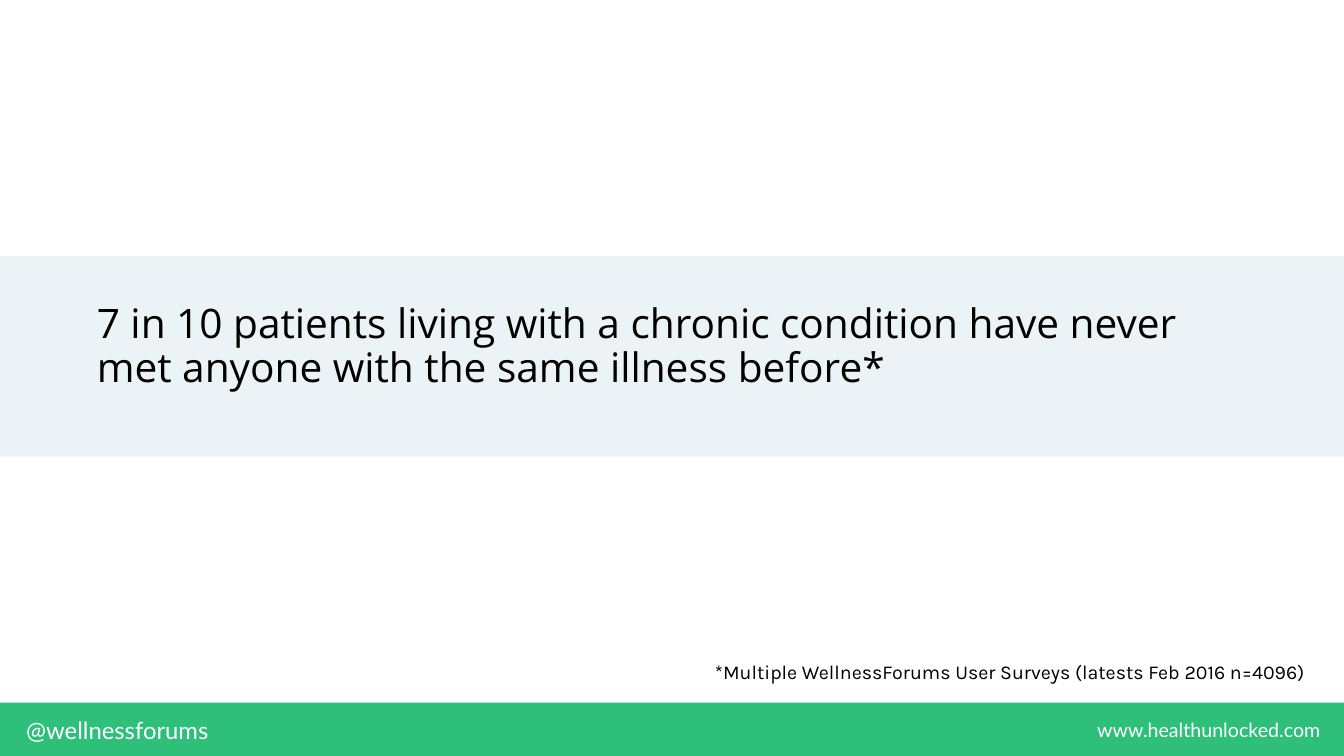
from pptx import Presentation
from pptx.dml.color import RGBColor
from pptx.enum.shapes import MSO_SHAPE as Preset
from pptx.enum.text import MSO_ANCHOR as Anchor, PP_ALIGN as Align
from pptx.util import Inches, Pt

COLORS = {"pale": "EBF3F6", "green": "2EBF7A", "white": "FFFFFF", "black": "000000"}
WIDTH, HEIGHT = 13.33, 7.5


def add_band(slide, box, color):
    """Draw a plain filled rectangle."""
    shape = slide.shapes.add_shape(Preset.RECTANGLE, *map(Inches, box))
    shape.shadow.inherit = False
    shape.fill.solid()
    shape.fill.fore_color.rgb = RGBColor.from_string(COLORS[color])
    shape.line.fill.background()


def add_text(slide, text, box, *, size, font, color="black", align=Align.CENTER,
             anchor=Anchor.MIDDLE, inset=0.04, spacing=1.0):
    """Place one formatted paragraph in a wrapping text box."""
    frame = slide.shapes.add_textbox(*map(Inches, box)).text_frame
    frame.word_wrap = True
    frame.vertical_anchor = anchor
    frame.margin_left = frame.margin_right = Inches(inset)
    frame.margin_top = frame.margin_bottom = Inches(inset)
    paragraph = frame.paragraphs[0]
    paragraph.alignment = align
    paragraph.line_spacing = spacing
    run = paragraph.add_run()
    run.text = text
    run.font.size = Pt(size)
    run.font.name = font
    run.font.color.rgb = RGBColor.from_string(COLORS[color])


def add_statement(slide, box):
    """Draw the pale band with the main statement."""
    left, top, width, height = box
    add_band(slide, box, "pale")
    add_text(slide, "7 in 10 patients living with a chronic condition have never "
             "met anyone with the same illness before*",
             (left + 0.91, top + 0.42, width - 1.81, 1.18), size=29, font="Open Sans",
             align=Align.LEFT, anchor=Anchor.TOP, inset=0.05, spacing=0.9)


def add_footer(slide, box):
    """Draw the green footer with the handle and the web address."""
    left, top, width, height = box
    add_band(slide, box, "green")
    add_text(slide, "@wellnessforums", (left - 0.12, top + 0.07, 2.57, 0.4),
             size=17, font="Lato", color="white")
    add_text(slide, "www.healthunlocked.com", (left + width - 2.71, top + 0.12, 2.74, 0.3),
             size=14, font="Lato", color="white")


def add_source_note(slide, box):
    """Place the survey note above the footer."""
    add_text(slide, "*Multiple WellnessForums User Surveys (latests Feb 2016 n=4096)",
             box, size=14, font="Karla")


def main():
    """Build and save the slide."""
    presentation = Presentation()
    presentation.slide_width = Inches(WIDTH)
    presentation.slide_height = Inches(HEIGHT)
    slide = presentation.slides.add_slide(presentation.slide_layouts[6])
    add_statement(slide, (0, 2.54, WIDTH, 1.99))
    add_footer(slide, (0, 6.97, WIDTH, 0.53))
    add_source_note(slide, (6.85, 6.51, 6.34, 0.31))
    presentation.save("out.pptx")


if __name__ == "__main__":
    main()
